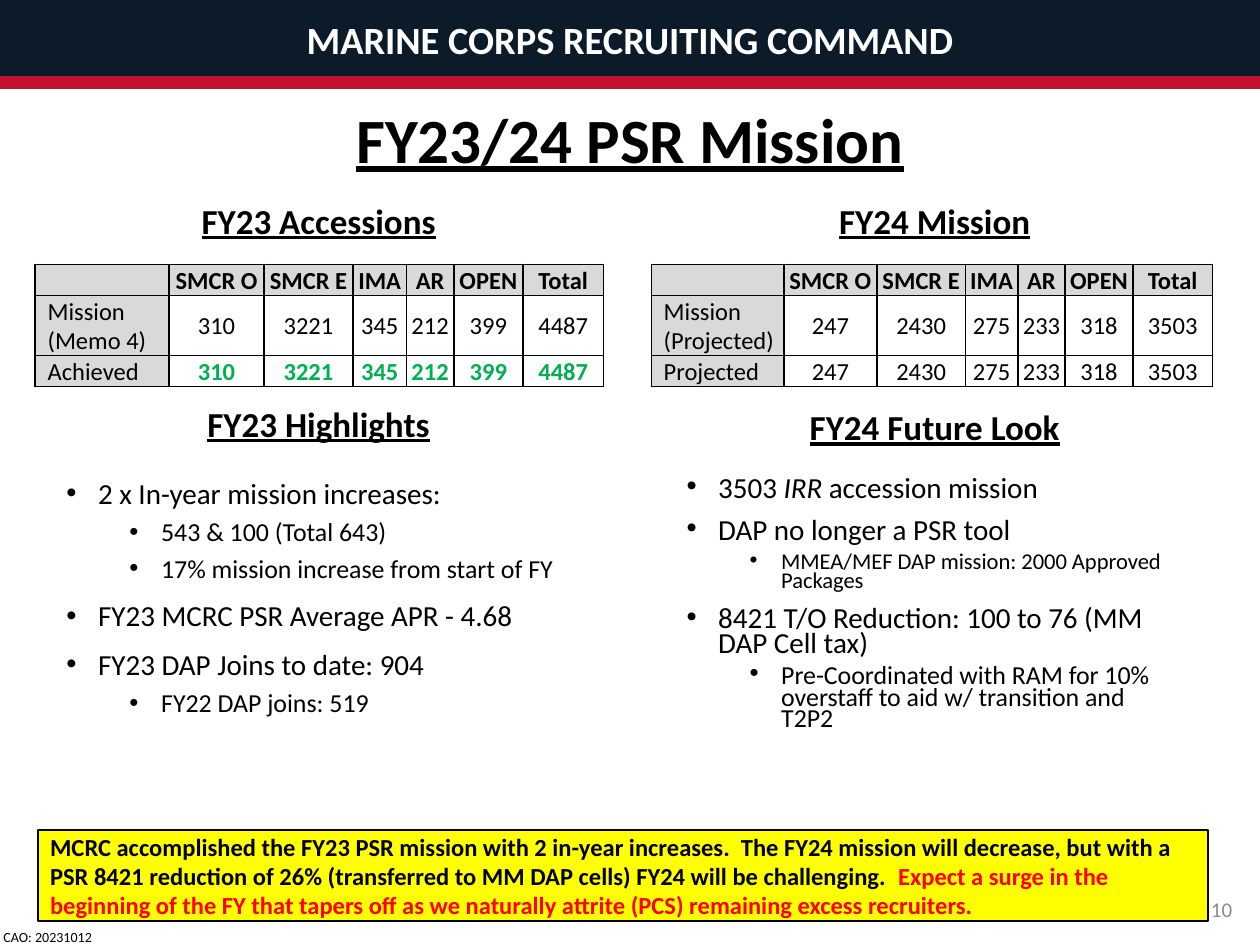
from typing import NamedTuple

from lxml.etree import SubElement
from pptx import Presentation
from pptx.dml.color import RGBColor
from pptx.enum.shapes import MSO_SHAPE as Shape
from pptx.enum.text import MSO_ANCHOR as Anchor, PP_ALIGN as Align
from pptx.oxml.ns import qn
from pptx.util import Cm, Pt

FONT = "Calibri"
COLORS = {
    "navy": "0B1B2A", "scarlet": "C41230", "white": "FFFFFF", "black": "000000",
    "gray": "8C8C8C", "header": "D9D9D9", "green": "00B050",
    "yellow": "FFFF00", "red": "FF0000",
}


class Box(NamedTuple):
    x: float
    y: float
    w: float
    h: float


class Label(NamedTuple):
    text: str
    box: Box
    size: float
    color: str = "black"
    bold: bool = False
    underline: bool = False
    align: Align = Align.CENTER
    anchor: Anchor = Anchor.TOP


class Item(NamedTuple):
    text: str
    size: float = 16.6
    level: int = 0
    italic: str = ""  # word of the text set in italics


class Grid(NamedTuple):
    box: Box
    widths: list[float]
    rows: list[list[str]]
    achieved: bool = False  # last row in bold green


class BulletList(NamedTuple):
    box: Box
    spacing: float
    items: list[Item]


HEAD = ["", "SMCR O", "SMCR E", "IMA", "AR", "OPEN", "Total"]
ROW_HEIGHTS = [0.6, 1.2, 0.6]
LEFT, RIGHT, COLUMN = 1.09, 13.51, 10.67

LABELS = [
    Label("MARINE CORPS RECRUITING COMMAND", Box(0, 0.2, 25.4, 1.19), 22, "white", True),
    Label("10", Box(22.25, 17.81, 2.84, 1.02), 12, "gray",
          align=Align.RIGHT, anchor=Anchor.MIDDLE),
    Label("CAO: 20231012", Box(-0.18, 18.59, 2.79, 0.6), 8, align=Align.LEFT),
] + [
    Label(text, Box(x, y, COLUMN, 1.11), 20, bold=True, underline=True)
    for text, x, y in [
        ("FY23 Accessions", LEFT, 3.89), ("FY24 Mission", RIGHT, 3.89),
        ("FY23 Highlights", LEFT, 7.98), ("FY24 Future Look", RIGHT, 8.05),
    ]
]

GRIDS = [
    Grid(Box(0.71, 5.33, 11.46, 2.4), [2.7, 1.91, 1.8, 1.07, 0.96, 1.39, 1.63], [
        HEAD,
        ["Mission (Memo 4)", "310", "3221", "345", "212", "399", "4487"],
        ["Achieved", "310", "3221", "345", "212", "399", "4487"],
    ], achieved=True),
    Grid(Box(13.13, 5.33, 11.31, 2.4), [2.67, 1.88, 1.78, 1.06, 0.95, 1.37, 1.6], [
        HEAD,
        ["Mission (Projected)", "247", "2430", "275", "233", "318", "3503"],
        ["Projected", "247", "2430", "275", "233", "318", "3503"],
    ]),
]

LISTS = [
    BulletList(Box(LEFT, 9.53, COLUMN, 5.49), 0.9, [
        Item("2 x In-year mission increases:"),
        Item("543 & 100 (Total 643)", 14.8, 1),
        Item("17% mission increase from start of FY", 14.8, 1),
        Item("FY23 MCRC PSR Average APR - 4.68"),
        Item("FY23 DAP Joins to date: 904"),
        Item("FY22 DAP joins: 519", 14.8, 1),
    ]),
    BulletList(Box(13.59, 9.53, 10.39, 5.49), 0.7, [
        Item("3503 IRR accession mission", italic="IRR "),
        Item("DAP no longer a PSR tool"),
        Item("MMEA/MEF DAP mission: 2000 Approved Packages", 12.9, 1),
        Item("8421 T/O Reduction: 100 to 76 (MM DAP Cell tax)"),
        Item("Pre-Coordinated with RAM for 10% overstaff to aid w/ transition and T2P2", 14.8, 1),
    ]),
]


def rgb(name: str) -> RGBColor:
    return RGBColor.from_string(COLORS[name])


def set_font(font, size: float, color: str = "black", bold: bool = False,
             underline: bool = False) -> None:
    font.name, font.size, font.bold = FONT, Pt(size), bold
    font.underline = underline
    font.color.rgb = rgb(color)


def add_bar(s, box: Box, fill: str, line: str):
    sp = s.shapes.add_shape(Shape.RECTANGLE, *map(Cm, box))
    sp.shadow.inherit = False
    sp.fill.solid()
    sp.fill.fore_color.rgb = rgb(fill)
    sp.line.color.rgb = rgb(line)
    sp.line.width = Pt(1)
    return sp


def add_box(s, box: Box):
    tf = s.shapes.add_textbox(*map(Cm, box)).text_frame
    tf.word_wrap = True
    return tf


def add_label(s, label: Label) -> None:
    tf = add_box(s, label.box)
    tf.vertical_anchor = label.anchor
    p = tf.paragraphs[0]
    p.text, p.alignment = label.text, label.align
    set_font(p.font, label.size, label.color, label.bold, label.underline)


def add_borders(cell) -> None:
    tc_pr = cell._tc.get_or_add_tcPr()
    for i, side in enumerate(("lnL", "lnR", "lnT", "lnB")):
        ln = tc_pr.makeelement(qn(f"a:{side}"), {"w": str(Pt(1))})
        fill = SubElement(ln, qn("a:solidFill"))
        SubElement(fill, qn("a:srgbClr"), val=COLORS["black"])
        tc_pr.insert(i, ln)


def add_grid(s, grid: Grid) -> None:
    table = s.shapes.add_table(len(grid.rows), len(HEAD), *map(Cm, grid.box)).table
    table.first_row = table.horz_banding = False
    for col, width in zip(table.columns, grid.widths):
        col.width = Cm(width)
    for i, values in enumerate(grid.rows):
        table.rows[i].height = Cm(ROW_HEIGHTS[i])
        for j, value in enumerate(values):
            cell = table.cell(i, j)
            cell.vertical_anchor = Anchor.MIDDLE
            cell.margin_left = Cm(0.25 if j == 0 else 0.03)
            cell.margin_right = cell.margin_top = Cm(0.03)
            cell.margin_bottom = 0
            if i == 0 or j == 0:
                cell.fill.solid()
                cell.fill.fore_color.rgb = rgb("header")
            else:
                cell.fill.background()
            add_borders(cell)
            p = cell.text_frame.paragraphs[0]
            p.text = value
            p.alignment = Align.CENTER if j else Align.LEFT
            green = grid.achieved and i == 2 and j > 0
            set_font(p.font, 14, "green" if green else "black", i == 0 or green)


def add_list(s, bullets: BulletList) -> None:
    tf = add_box(s, bullets.box)
    for i, item in enumerate(bullets.items):
        p = tf.add_paragraph() if i else tf.paragraphs[0]
        p.level, p.line_spacing = item.level, bullets.spacing
        p.space_before = Pt((5 if item.level else 10) if i else 0)
        p_pr = p._p.get_or_add_pPr()
        p_pr.set("marL", str(Cm(1.91 if item.level else 0.64)))
        p_pr.set("indent", str(-Cm(0.64)))
        SubElement(p_pr, qn("a:buFont"), typeface="Arial")
        SubElement(p_pr, qn("a:buChar"), char="•")
        set_font(p.font, item.size)
        if item.italic:
            before, after = item.text.split(item.italic)
            for text in (before, item.italic, after):
                r = p.add_run()
                r.text, r.font.italic = text, text == item.italic
        else:
            p.text = item.text


def add_summary(s) -> None:
    tf = add_bar(s, Box(0.76, 16.74, 23.6, 1.83), "yellow", "black").text_frame
    tf.word_wrap, tf.vertical_anchor = True, Anchor.MIDDLE
    p = tf.paragraphs[0]
    p.alignment = Align.LEFT
    for text, color in [
        ("MCRC accomplished the FY23 PSR mission with 2 in-year increases.  The FY24 mission "
         "will decrease, but with a PSR 8421 reduction of 26% (transferred to MM DAP cells) "
         "FY24 will be challenging.  ", "black"),
        ("Expect a surge in the beginning of the FY that tapers off as we naturally attrite "
         "(PCS) remaining excess recruiters.", "red"),
    ]:
        r = p.add_run()
        r.text = text
        set_font(r.font, 14, color, True)


def main() -> None:
    prs = Presentation()
    prs.slide_width, prs.slide_height = Cm(25.4), Cm(19.05)
    s = prs.slides.add_slide(prs.slide_layouts[5])

    # Banner
    add_bar(s, Box(0, 1.52, 25.4, 0.25), "scarlet", "scarlet")
    add_bar(s, Box(0, 0, 25.4, 1.52), "navy", "navy")

    # Title
    title = s.shapes.title
    title.left, title.top, title.width, title.height = map(Cm, (1.75, 1.96, 21.9, 1.83))
    title.text_frame.vertical_anchor = Anchor.MIDDLE
    p = title.text_frame.paragraphs[0]
    p.text, p.alignment, p.line_spacing = "FY23/24 PSR Mission", Align.CENTER, 0.9
    set_font(p.font, 36, bold=True, underline=True)

    # Headings, tables, lists and summary
    for label in LABELS:
        add_label(s, label)
    for grid in GRIDS:
        add_grid(s, grid)
    for bullets in LISTS:
        add_list(s, bullets)
    add_summary(s)
    prs.save("out.pptx")


if __name__ == "__main__":
    main()
